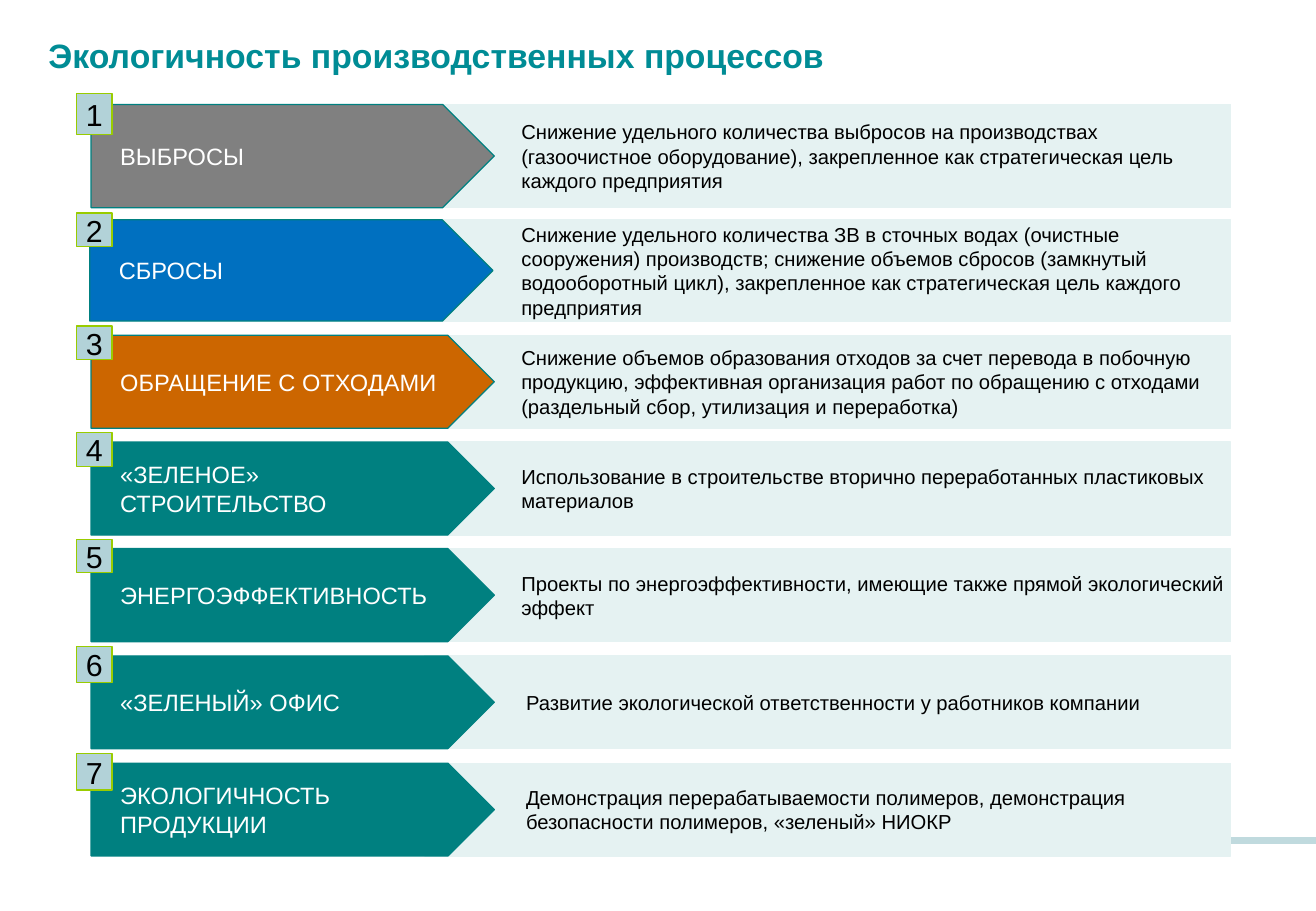
from lxml.etree import SubElement
from pptx import Presentation
from pptx.dml.color import RGBColor
from pptx.enum.shapes import MSO_CONNECTOR, MSO_SHAPE
from pptx.enum.text import MSO_ANCHOR, PP_ALIGN
from pptx.oxml.ns import qn
from pptx.util import Pt

TEAL = "008080"
ROWS = [
    ("ВЫБРОСЫ", "Снижение удельного количества выбросов на производствах (газоочистное оборудование), закрепленное как стратегическая цель каждого предприятия",
     "808080", (45.4, 61.9, 684, 61.2), 6.5, 24.5),
    ("СБРОСЫ", "Снижение удельного количества ЗВ в сточных водах (очистные сооружения) производств; снижение объемов сбросов (замкнутый водооборотный цикл), закрепленное как стратегическая цель каждого предприятия",
     "0070C0", (45.4, 130.3, 684, 60), 4, 20),
    ("ОБРАЩЕНИЕ С ОТХОДАМИ", "Снижение объемов образования отходов за счет перевода в побочную продукцию, эффективная организация работ по обращению с отходами (раздельный сбор, утилизация и переработка)",
     "CC6600", (45.4, 198.7, 684, 55.2), 5.4, 20),
    ("«ЗЕЛЕНОЕ» СТРОИТЕЛЬСТВО", "Использование в строительстве вторично переработанных пластиковых материалов",
     TEAL, (45.4, 262, 684, 55.2), 5.6, 20),
    ("ЭНЕРГОЭФФЕКТИВНОСТЬ", "Проекты по энергоэффективности, имеющие также прямой экологический эффект",
     TEAL, (45.4, 325.2, 684, 55.2), 5.6, 20),
    ("«ЗЕЛЕНЫЙ» ОФИС", "Развитие экологической ответственности у работников компании",
     TEAL, (45.4, 388.8, 684, 55), 5.6, 21.6),
    ("ЭКОЛОГИЧНОСТЬ ПРОДУКЦИИ", "Демонстрация перерабатываемости полимеров, демонстрация безопасности полимеров, «зеленый» НИОКР",
     TEAL, (45.4, 452.4, 684, 55), 5.6, 21.6),
]


def color(value):
    """Turn a hex string into a colour."""
    return RGBColor.from_string(value)


def write(sp, text, size, font_color, insets, align=PP_ALIGN.LEFT, bold=False):
    """Put one formatted paragraph into a shape."""
    tf = sp.text_frame
    left, top, right, bottom = insets
    frame = {"word_wrap": True, "vertical_anchor": MSO_ANCHOR.MIDDLE,
             "margin_left": Pt(left), "margin_top": Pt(top),
             "margin_right": Pt(right), "margin_bottom": Pt(bottom)}
    for name, value in frame.items():
        setattr(tf, name, value)
    p = tf.paragraphs[0]
    p.alignment = align
    r = p.add_run()
    r.text = text
    for name, value in {"name": "Arial", "size": Pt(size), "bold": bold}.items():
        setattr(r.font, name, value)
    r.font.color.rgb = color(font_color)


def add_block(s, kind, box, fill, line):
    """Add a filled and outlined shape."""
    sp = s.shapes.add_shape(kind, *map(Pt, box))
    sp.shadow.inherit = False
    sp.fill.solid()
    sp.fill.fore_color.rgb = color(fill)
    sp.line.color.rgb = color(line)
    sp.line.width = Pt(0.75)
    return sp


def add_title(s, box, text):
    """Add the slide title."""
    sp = s.shapes.add_textbox(*map(Pt, box))
    write(sp, text, 20, "008C95", (7.2, 3.6, 7.2, 3.6), bold=True)


def add_rule(s, box):
    """Add the horizontal accent line along the top of a box."""
    x, y, w, h = box
    line = s.shapes.add_connector(MSO_CONNECTOR.STRAIGHT, Pt(x), Pt(y), Pt(x + w), Pt(y + h))
    line.line.color.rgb = color("C0DADE")
    line.line.width = Pt(3.75)
    SubElement(line._element.spPr, qn("a:effectLst"))


def add_row(s, box, number, row):
    """Add a description panel, its arrow label and its number badge."""
    label, description, fill, _, lift, badge_height = row
    x, y, w, h = box
    panel_x = x + (206.6 if number > 5 else 203.8)
    arrow_x = x + (7.8 if number == 2 else 8.6)
    panel = add_block(s, MSO_SHAPE.RECTANGLE, (panel_x, y, x + w - panel_x, h), "E5F2F2", "E5F2F2")
    write(panel, description, 12, "000000", (59.8, 2.8, 2.8, 2.8))
    arrow = add_block(s, MSO_SHAPE.PENTAGON, (arrow_x, y, 239, h), fill, TEAL)
    write(arrow, label, 14, "FFFFFF", (17.2, 2.8, 2.8, 2.8))
    badge = add_block(s, MSO_SHAPE.RECTANGLE, (x, y - lift, 21, badge_height), "B2D2D8", "99CC00")
    write(badge, str(number), 18, "000000", (0, 0, 0, 0), PP_ALIGN.CENTER)


def main():
    """Build and save the slide."""
    prs = Presentation()
    prs.slide_width, prs.slide_height = Pt(780), Pt(540)
    s = prs.slides.add_slide(prs.slide_layouts[6])
    add_rule(s, (528.5, 498.2, 251.5, 0))
    add_title(s, (21.6, 5, 666.7, 55.4), "Экологичность производственных процессов")
    for number, row in enumerate(ROWS, 1):
        add_row(s, row[3], number, row)
    prs.save("out.pptx")


if __name__ == "__main__":
    main()
